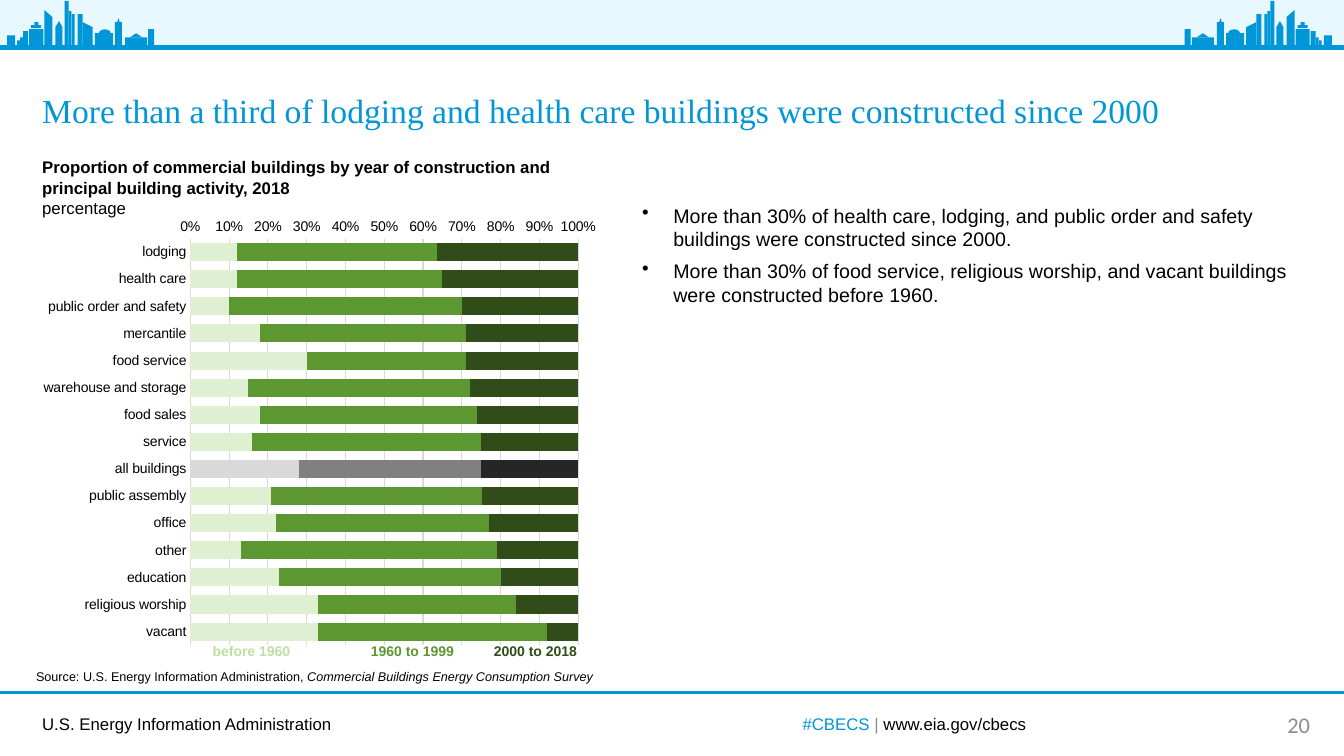
"""Builds a slide on the age of commercial buildings, with a stacked bar chart."""
from lxml import etree
from pptx import Presentation
from pptx.chart.data import CategoryChartData
from pptx.dml.color import RGBColor
from pptx.enum.chart import XL_CHART_TYPE, XL_TICK_MARK
from pptx.enum.shapes import MSO_CONNECTOR, MSO_SHAPE
from pptx.enum.text import MSO_ANCHOR, PP_ALIGN
from pptx.oxml.ns import qn
from pptx.util import Pt

RECT = MSO_SHAPE.RECTANGLE
PEAK = MSO_SHAPE.ISOSCELES_TRIANGLE
SLOPE = MSO_SHAPE.RIGHT_TRIANGLE
DOME = MSO_SHAPE.OVAL
STRAIGHT = MSO_CONNECTOR.STRAIGHT
TOP, MIDDLE, BOTTOM = MSO_ANCHOR.TOP, MSO_ANCHOR.MIDDLE, MSO_ANCHOR.BOTTOM
LEFT, CENTER = PP_ALIGN.LEFT, PP_ALIGN.CENTER
STACKED = XL_CHART_TYPE.BAR_STACKED_100
NO_TICK = XL_TICK_MARK.NONE

SCALE = 9144
WIDTH, HEIGHT = 1333, 750
MIRROR = 1328

COLORS = {
    "blue": "0096D7", "sky": "E7F8FF", "black": "000000", "gray": "8C8C8C",
    "grid": "D9D9D9", "label": "BDE0A2", "pale": "DEF0D1", "green": "5D9732",
    "dark": "2F4C19", "light": "D9D9D9", "mid": "808080", "coal": "262626",
}

SKYLINE = [
    (RECT, 7, 35, 8, 11), (RECT, 17, 40, 3, 6), (RECT, 20, 37, 3, 9),
    (RECT, 23, 31, 5, 15), (RECT, 29, 29, 14, 17), (RECT, 31, 25, 10, 3),
    (RECT, 34, 22, 4, 3), (RECT, 44, 17, 8, 29), (SLOPE, 44, 10, 8, 7),
    (PEAK, 55, 21, 7, 6), (RECT, 55, 27, 7, 19), (RECT, 64, 1, 4, 45),
    (RECT, 68, 11, 3, 35), (RECT, 71, 14, 3, 32), (RECT, 77, 14, 5, 32),
    (RECT, 82, 27, 10, 19), (SLOPE, 82, 22, 10, 5), (RECT, 94, 33, 18, 13),
    (DOME, 98, 29, 12, 9), (PEAK, 114, 18, 7, 11), (RECT, 114, 22, 7, 24),
    (RECT, 124, 37, 22, 9), (PEAK, 129, 33, 12, 4), (RECT, 147, 29, 6, 16),
]

USES = [
    "lodging", "health care", "public order and safety", "mercantile",
    "food service", "warehouse and storage", "food sales", "service",
    "all buildings", "public assembly", "office", "other", "education",
    "religious worship", "vacant",
]
TOTAL = USES.index("all buildings")

PERIODS = [
    ("before 1960", "pale", "light",
     [12, 12, 10, 18, 30, 15, 18, 16, 28, 21, 22, 13, 23, 33, 33]),
    ("1960 to 1999", "green", "mid",
     [51, 53, 60, 53, 41, 57, 56, 59, 47, 55, 55, 66, 57, 51, 59]),
    ("2000 to 2018", "dark", "coal",
     [36, 35, 30, 29, 29, 28, 26, 25, 25, 25, 23, 21, 20, 16, 8]),
]
LABELS = [(201, 111, "label"), (358, 103, "green"), (480, 103, "dark")]
PLOT = {"x": 0.275, "y": 0.063, "w": 0.675, "h": 0.917}


def px(*sizes):
    """Turn px into EMU."""
    return [size * SCALE for size in sizes]


def rgb(name):
    """Look up a colour by name."""
    return RGBColor.from_string(COLORS[name])


class Page:
    """Holds the style and the slide being drawn."""

    def __init__(self, slide, font="Arial"):
        """Keep the slide and its main font."""
        self.shapes = slide.shapes
        self.font = font

    def shape(self, kind, x, y, w, h, color, flip=False):
        """Draw a filled shape with no outline."""
        item = self.shapes.add_shape(kind, *px(x, y, w, h))
        item.shadow.inherit = False
        item.fill.solid()
        item.fill.fore_color.rgb = rgb(color)
        item.line.fill.background()
        if flip:
            item.element.spPr.xfrm.set("flipH", "1")

    def rule(self, y, weight):
        """Draw a line across the slide."""
        line = self.shapes.add_connector(STRAIGHT, *px(0, y, WIDTH, y))
        line.line.color.rgb = rgb("blue")
        line.line.width = Pt(weight)
        etree.SubElement(line.element.spPr, qn("a:effectLst"))

    def style(self, font, size, color, bold=False, italic=False, face=None):
        """Set the look of a font."""
        font.name = face or self.font
        font.size = Pt(size)
        font.color.rgb = rgb(color)
        font.bold = bold
        font.italic = italic

    def text(self, box, lines, size, color="black", anchor=TOP, align=LEFT,
             face=None, wrap=True, bullet=False):
        """Write lines, each a list of runs with text and style changes."""
        frame = self.shapes.add_textbox(*px(*box)).text_frame
        frame.word_wrap = wrap
        frame.vertical_anchor = anchor
        for n, runs in enumerate(lines):
            para = frame.add_paragraph() if n else frame.paragraphs[0]
            para.alignment = align
            for words, change in runs:
                run = para.add_run()
                run.text = words
                self.style(run.font, size, **{"color": color, "face": face, **change})
            if bullet:
                self.bullet(para)

    def bullet(self, para):
        """Give a paragraph a hanging bullet."""
        para.space_after = Pt(6)
        props = para._p.get_or_add_pPr()
        props.set("marL", str(31 * SCALE))
        props.set("indent", str(-31 * SCALE))
        etree.SubElement(props, qn("a:buChar")).set("char", "•")

    def chart(self, box):
        """Draw the stacked bars."""
        data = CategoryChartData()
        data.categories = USES
        for name, _, _, values in PERIODS:
            data.add_series(name, values)
        chart = self.shapes.add_chart(STACKED, *px(*box), data).chart
        chart.has_legend = chart.has_title = False
        self.style(chart.font, 10, "black")
        plot = chart.plots[0]
        plot.gap_width, plot.overlap = 50, 100
        plot.vary_by_categories = False
        for bars, (_, color, accent, _) in zip(plot.series, PERIODS):
            for part, tint in ((bars, color), (bars.points[TOTAL], accent)):
                part.format.fill.solid()
                part.format.fill.fore_color.rgb = rgb(tint)
        self.axes(chart)
        self.place(chart)

    def axes(self, chart):
        """Style both axes and the grid."""
        uses, share = chart.category_axis, chart.value_axis
        for axis in (uses, share):
            axis.major_tick_mark = axis.minor_tick_mark = NO_TICK
            self.style(axis.tick_labels.font, 10, "black")
        uses.reverse_order = True
        share.minimum_scale, share.maximum_scale = 0, 1
        share.major_unit = 0.1
        share.tick_labels.number_format = "0%"
        share.tick_labels.number_format_is_linked = False
        share.format.line.fill.background()
        for line in (uses.format.line, share.major_gridlines.format.line):
            line.color.rgb = rgb("grid")
            line.width = Pt(0.75)

    def place(self, chart):
        """Fix the inner plot area within the chart."""
        area = chart._chartSpace.chart.plotArea
        for old in area.findall(qn("c:layout")):
            area.remove(old)
        layout = etree.Element(qn("c:layout"))
        area.insert(0, layout)
        inner = etree.SubElement(layout, qn("c:manualLayout"))
        parts = {"layoutTarget": "inner", "xMode": "edge", "yMode": "edge", **PLOT}
        for tag, value in parts.items():
            etree.SubElement(inner, qn("c:" + tag)).set("val", str(value))


def main():
    """Build and save the slide."""
    deck = Presentation()
    deck.slide_width, deck.slide_height = px(WIDTH, HEIGHT)
    page = Page(deck.slides.add_slide(deck.slide_layouts[6]))

    page.rule(687, 2.25)
    page.shape(RECT, 0, 0, WIDTH, 45, "sky")
    page.rule(47, 3.5)
    for kind, x, y, w, h in SKYLINE:
        page.shape(kind, x, y, w, h, "blue")
        page.shape(kind, MIRROR - x - w, y, w, h, "blue", flip=True)

    page.text((32, 51, 1269, 83), [[(
        "More than a third of lodging and health care buildings were constructed since 2000",
        {})]], 24, "blue", anchor=BOTTOM, face="Times New Roman")
    page.chart((32, 209, 570, 440))
    page.text((32, 151, 786, 71), [
        [("Proportion of commercial buildings by year of construction and", {"bold": True})],
        [("principal building activity, 2018", {"bold": True})],
        [("percentage", {})]], 12)
    page.text((627, 197, 674, 113), [
        [("More than 30% of health care, lodging, and public order and safety "
          "buildings were constructed since 2000.", {})],
        [("More than 30% of food service, religious worship, and vacant buildings "
          "were constructed before 1960.", {})]], 14, bullet=True)
    for (x, w, color), period in zip(LABELS, PERIODS):
        page.text((x, 633, w, 27), [[(period[0], {"bold": True})]], 10, color, wrap=False)
    page.text((26, 659, 667, 25), [[
        ("Source: U.S. Energy Information Administration, ", {}),
        ("Commercial Buildings Energy Consumption Survey", {"italic": True})]], 9)

    page.text((32, 703, 370, 30), [[("U.S. Energy Information Administration", {})]], 12)
    page.text((682, 698, 450, 40), [[
        ("#CBECS ", {"color": "blue"}), ("| ", {"color": "gray"}),
        ("www.eia.gov/cbecs", {})]], 12, anchor=MIDDLE, align=CENTER)
    page.text((1258, 699, 60, 40), [[("20", {})]], 16, "gray", MIDDLE, CENTER, "Calibri")
    deck.save("out.pptx")


if __name__ == "__main__":
    main()
